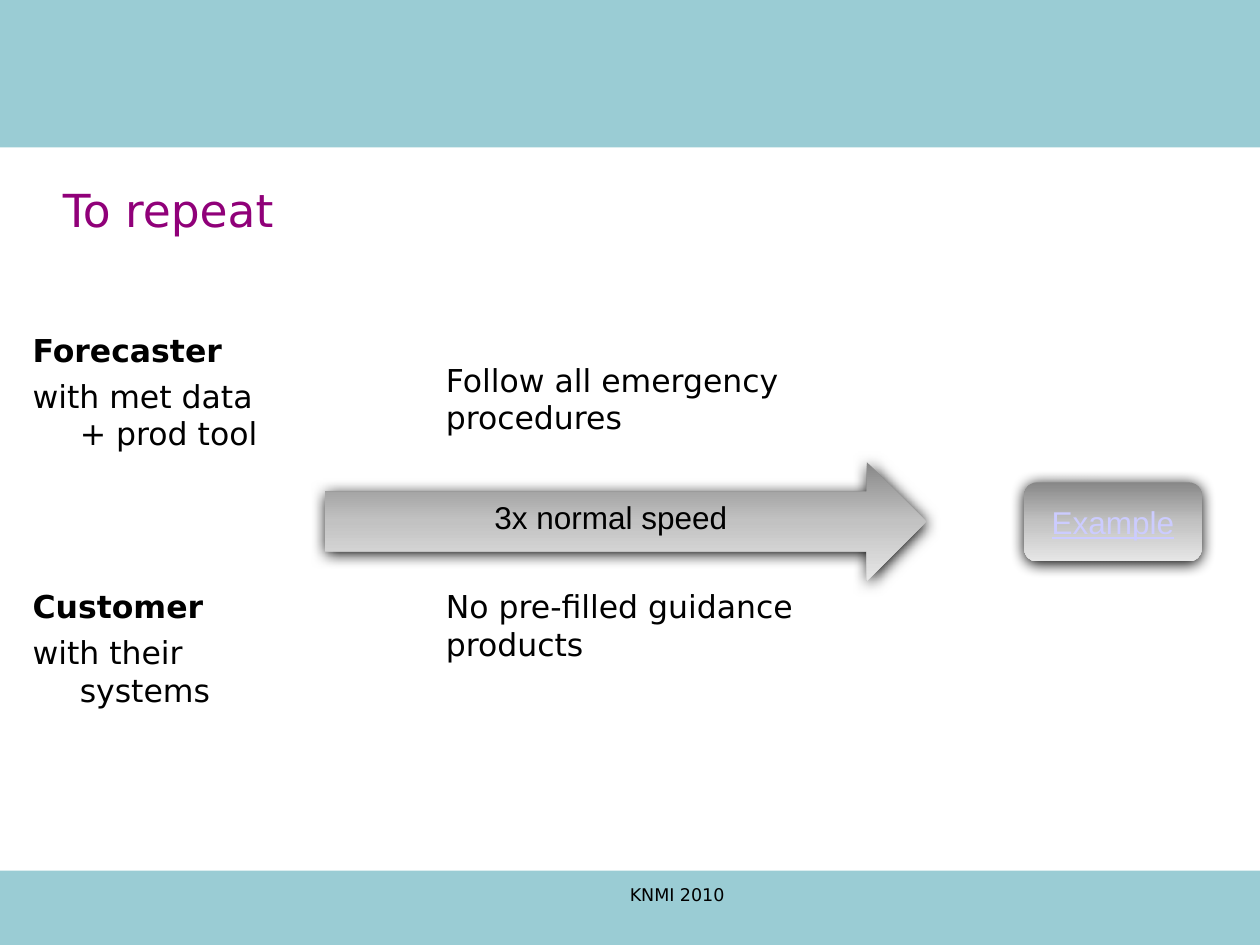
import pptx
import pptx.dml.color
import pptx.enum.shapes
import pptx.enum.text
import pptx.oxml
import pptx.oxml.ns
import pptx.util

Pt = pptx.util.Pt
SHAPES = pptx.enum.shapes.MSO_SHAPE
ANCHOR = pptx.enum.text.MSO_ANCHOR
ALIGN = pptx.enum.text.PP_ALIGN
NAMESPACE = pptx.oxml.ns.nsdecls("a")

WIDTH, HEIGHT = 720, 540
TEAL, PURPLE, BLACK, LAVENDER = "9ACCD4", "900079", "000000", "CCCCFF"
GRADIENT = [(0, "888888"), (50, "C2C2C2"), (100, "E6E6E6")]
SPACE_BEFORE = 4.5
HANGING = 27


def color(value):
    return pptx.dml.color.RGBColor.from_string(value)


def style_font(font, size, name, value, bold=False, underline=False):
    font.size = Pt(size)
    font.name = name
    font.color.rgb = color(value)
    font.bold = bold
    font.underline = underline


def add_plain_shape(slide, kind, box):
    shape = slide.shapes.add_shape(kind, *map(Pt, box))
    shape.shadow.inherit = False
    shape.line.fill.background()
    return shape


def add_band(slide, top, height):
    band = add_plain_shape(slide, SHAPES.RECTANGLE, (0, top, WIDTH, height))
    band.fill.solid()
    band.fill.fore_color.rgb = color(TEAL)


def add_text(slide, box, lines, size=18, value=BLACK, anchor=ANCHOR.TOP,
             hanging=0, bold_first=False):
    text_frame = slide.shapes.add_textbox(*map(Pt, box)).text_frame
    text_frame.word_wrap = True
    text_frame.vertical_anchor = anchor
    text_frame.text = "\n".join(lines)
    for index, paragraph in enumerate(text_frame.paragraphs):
        if hanging:
            properties = paragraph._p.get_or_add_pPr()
            properties.set("marL", str(Pt(hanging)))
            properties.set("indent", str(-Pt(hanging)))
        if index:
            paragraph.space_before = Pt(SPACE_BEFORE)
        style_font(paragraph.runs[0].font, size, "DejaVu Sans", value,
                   bold=bold_first and index == 0)


def add_glossy_shape(slide, kind, box, text, value, anchor, underline=False):
    shape = add_plain_shape(slide, kind, box)

    # Vertical gradient with three stops
    shape.fill.gradient()
    shape.fill.gradient_angle = 270
    properties = shape._element.spPr
    stops = properties.find(".//" + pptx.oxml.ns.qn("a:gsLst"))
    for stop in list(stops):
        stops.remove(stop)
    for position, stop_color in GRADIENT:
        stops.append(pptx.oxml.parse_xml(
            f'<a:gs {NAMESPACE} pos="{position * 1000}">'
            f'<a:srgbClr val="{stop_color}"/></a:gs>'))

    # Soft shadow just below the shape
    effects = properties.find(pptx.oxml.ns.qn("a:effectLst"))
    effects.append(pptx.oxml.parse_xml(
        f'<a:outerShdw {NAMESPACE} blurRad="{Pt(8.5)}" dist="{Pt(1)}" '
        f'dir="5400000" rotWithShape="0"><a:srgbClr val="{BLACK}"/>'
        '</a:outerShdw>'))

    text_frame = shape.text_frame
    text_frame.text = text
    text_frame.vertical_anchor = anchor
    paragraph = text_frame.paragraphs[0]
    paragraph.alignment = ALIGN.CENTER
    style_font(paragraph.runs[0].font, 18, "Arial", value, underline=underline)


def main():
    presentation = pptx.Presentation()
    presentation.slide_width = Pt(WIDTH)
    presentation.slide_height = Pt(HEIGHT)
    slide = presentation.slides.add_slide(presentation.slide_layouts[6])

    # Bands, footer and title
    add_band(slide, 497.5, HEIGHT - 497.5)
    add_band(slide, 0, 84.3)
    add_text(slide, (352.8, 501.8, 327.6, 22.3), ["KNMI 2010"], size=10)
    add_text(slide, (28.8, 97.2, 643, 44.6), ["To repeat"], size=26,
             value=PURPLE, anchor=ANCHOR.MIDDLE)

    # Roles on the left
    roles = [(185.5, 101.5, ["Forecaster", "with met data + prod tool"]),
             (331.9, 90, ["Customer", "with their systems"])]
    for top, height, lines in roles:
        add_text(slide, (11.5, top, 157, height), lines,
                 hanging=HANGING, bold_first=True)

    # Arrow with the instructions above and below it
    add_glossy_shape(slide, SHAPES.RIGHT_ARROW, (185.8, 264.2, 343.4, 67.7),
                     "3x normal speed", BLACK, ANCHOR.TOP)
    instructions = [(202.5, "Follow all emergency procedures"),
                    (331.9, "No pre-filled guidance products")]
    for top, text in instructions:
        add_text(slide, (247.7, top, 219.6, 56.2), [text])

    # Example button
    add_glossy_shape(slide, SHAPES.ROUNDED_RECTANGLE, (585.2, 275.6, 101.5, 45.2),
                     "Example", LAVENDER, ANCHOR.MIDDLE, underline=True)

    presentation.save("out.pptx")


if __name__ == "__main__":
    main()
